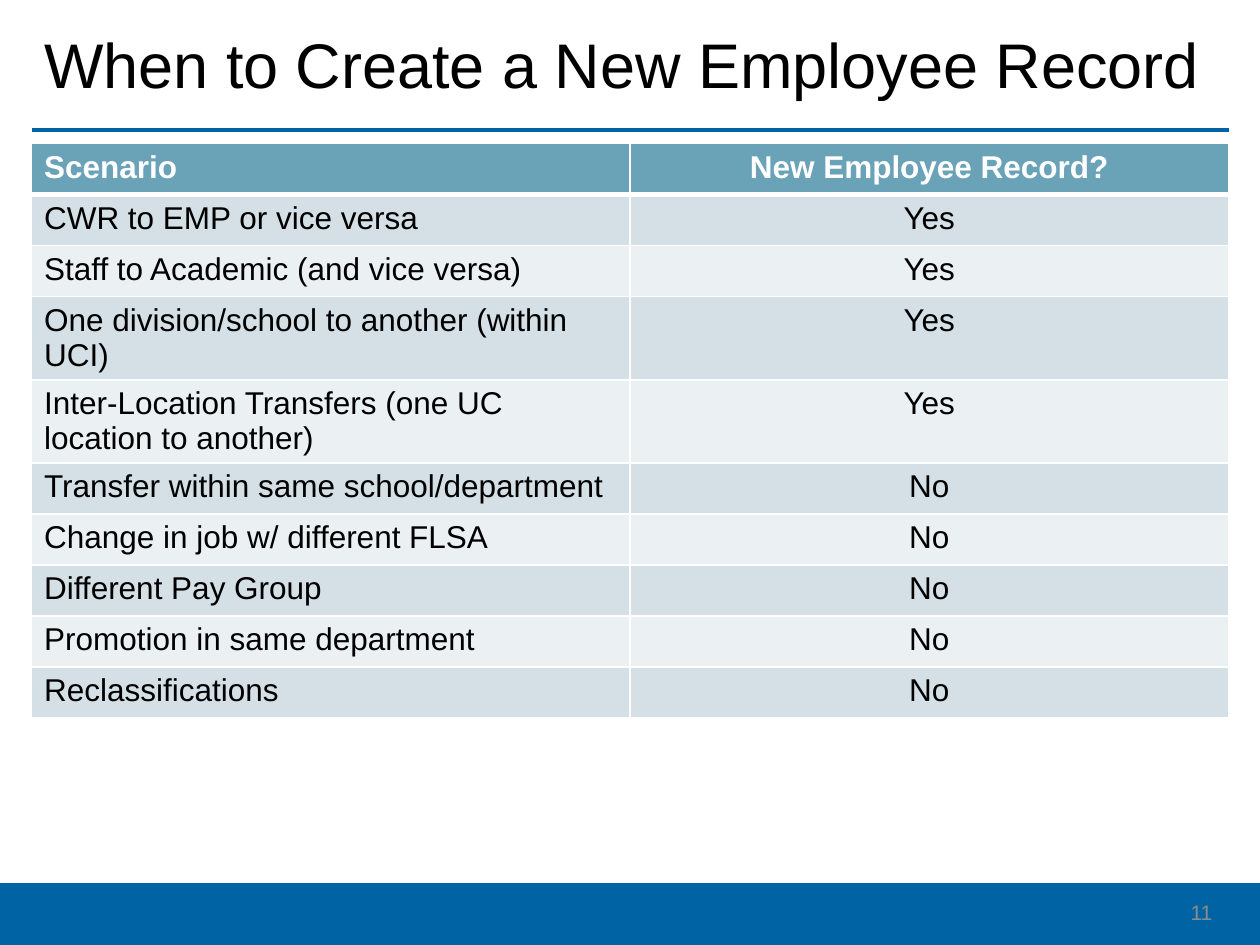
"""Build the slide showing when a new employee record is created."""
from dataclasses import dataclass

from lxml.etree import SubElement
from pptx import Presentation
from pptx.dml.color import RGBColor
from pptx.enum.shapes import MSO_CONNECTOR, MSO_SHAPE
from pptx.enum.text import MSO_ANCHOR, PP_ALIGN
from pptx.oxml.ns import qn
from pptx.util import Inches, Pt


@dataclass(frozen=True)
class Theme:
    font: str = "Arial"
    blue: str = "0064A4"
    header: str = "6AA2B8"
    bands: tuple = ("EBF0F3", "D4E0E6")
    white: str = "FFFFFF"
    black: str = "000000"
    gray: str = "8C8C8C"
    title_size: int = 36
    table_size: int = 18
    number_size: int = 12


theme = Theme()


def style_text(para, size, color, align=PP_ALIGN.LEFT, bold=False):
    para.alignment = align
    para.font.name = theme.font
    para.font.size = Pt(size)
    para.font.bold = bold
    para.font.color.rgb = RGBColor.from_string(color)


def add_border(cell, side, width):
    properties = cell._tc.get_or_add_tcPr()
    line = SubElement(properties, qn(f"a:{side}"), w=str(Pt(width)))
    fill = SubElement(line, qn("a:solidFill"))
    SubElement(fill, qn("a:srgbClr"), val=theme.white)


rows = [
    ("Scenario", "New Employee Record?"),
    ("CWR to EMP or vice versa", "Yes"),
    ("Staff to Academic (and vice versa)", "Yes"),
    ("One division/school to another (within UCI)", "Yes"),
    ("Inter-Location Transfers (one UC location to another)", "Yes"),
    ("Transfer within same school/department", "No"),
    ("Change in job w/ different FLSA", "No"),
    ("Different Pay Group", "No"),
    ("Promotion in same department", "No"),
    ("Reclassifications", "No"),
]

deck = Presentation()
deck.slide_width, deck.slide_height = Inches(10), Inches(7.5)
page = deck.slides.add_slide(deck.slide_layouts[5])
margin, content_width = Inches(0.25), Inches(9.5)

rule = page.shapes.add_connector(
    MSO_CONNECTOR.STRAIGHT, margin, Inches(1.03), margin + content_width, Inches(1.03)
)
rule.line.color.rgb = RGBColor.from_string(theme.blue)
rule.line.width = Pt(2.25)
SubElement(rule._element.spPr, qn("a:effectLst"))

footer = page.shapes.add_shape(
    MSO_SHAPE.RECTANGLE, 0, Inches(7.01), deck.slide_width, Inches(0.5)
)
footer.shadow.inherit = False
footer.fill.solid()
footer.fill.fore_color.rgb = RGBColor.from_string(theme.blue)
footer.line.fill.background()

title = page.shapes.title
title.left, title.top = margin, Inches(0.05)
title.width, title.height = content_width, Inches(0.98)
title.text_frame.text = "When to Create a New Employee Record"
title.text_frame.vertical_anchor = MSO_ANCHOR.MIDDLE
title_para = title.text_frame.paragraphs[0]
title_para.line_spacing = 0.9
style_text(title_para, theme.title_size, theme.black)

table = page.shapes.add_table(
    len(rows), 2, margin, Inches(1.14), content_width, Inches(4.05)
).table
for row_index, row in enumerate(rows):
    is_header = row_index == 0
    fill_color = theme.header if is_header else theme.bands[row_index % 2]
    text_color = theme.white if is_header else theme.black
    widths = {
        "lnL": 1,
        "lnR": 1,
        "lnT": 3 if row_index == 1 else 1,
        "lnB": 3 if is_header else 1,
    }
    for column_index, text in enumerate(row):
        cell = table.cell(row_index, column_index)
        cell.text = text
        align = PP_ALIGN.CENTER if column_index else PP_ALIGN.LEFT
        style_text(
            cell.text_frame.paragraphs[0], theme.table_size, text_color, align, is_header
        )
        for side, width in widths.items():
            add_border(cell, side, width)
        cell.fill.solid()
        cell.fill.fore_color.rgb = RGBColor.from_string(fill_color)

number_box = page.shapes.add_textbox(Inches(7.47), Inches(7.04), Inches(2.25), Inches(0.4))
number_box.text_frame.word_wrap = True
number_box.text_frame.vertical_anchor = MSO_ANCHOR.MIDDLE
number_box.text_frame.text = "11"
style_text(
    number_box.text_frame.paragraphs[0], theme.number_size, theme.gray, PP_ALIGN.RIGHT
)

deck.save("out.pptx")
